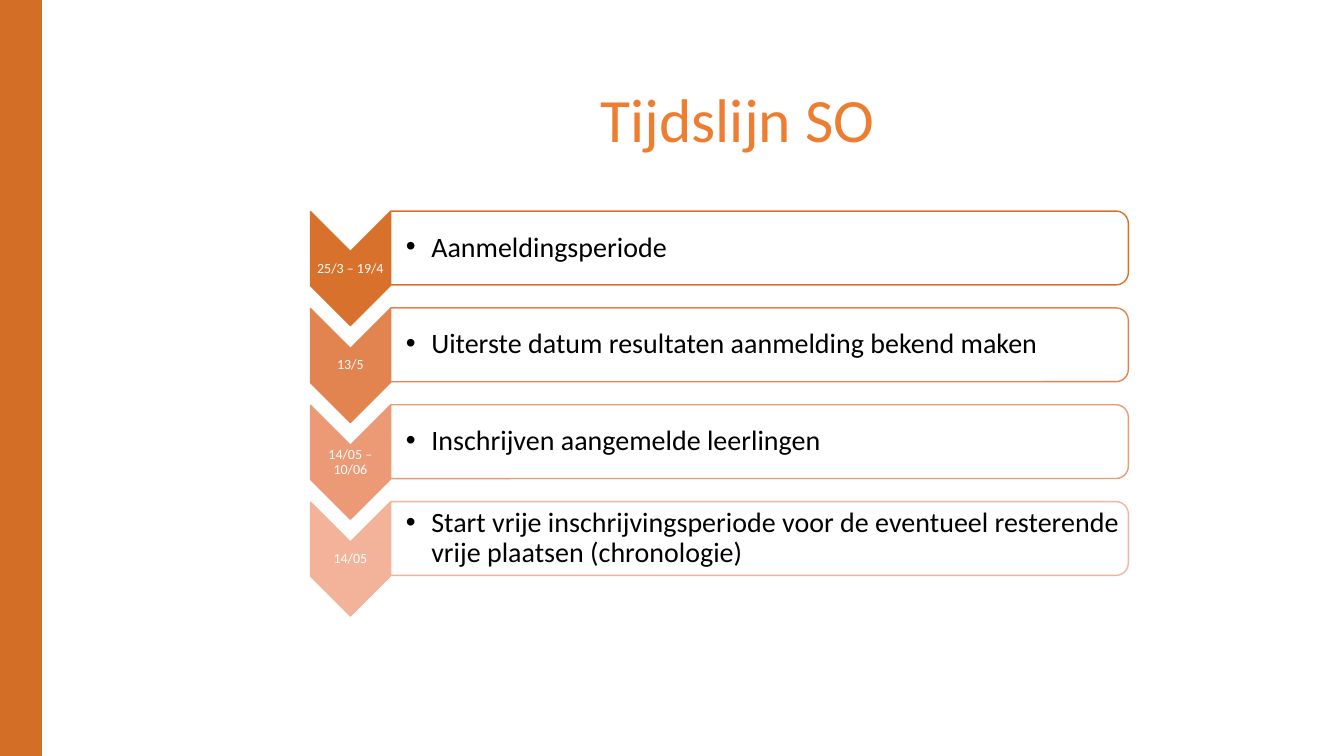
"""Build the slide with the secondary school enrolment timeline."""
from pptx import Presentation
from pptx.dml.color import RGBColor
from pptx.enum.shapes import MSO_SHAPE
from pptx.enum.text import MSO_ANCHOR, PP_ALIGN
from pptx.oxml.ns import qn
from pptx.util import Cm, Pt
from lxml.etree import SubElement

WHITE = RGBColor(0xFF, 0xFF, 0xFF)
BLACK = RGBColor(0, 0, 0)
ORANGE = RGBColor(0xED, 0x7D, 0x31)
BAND = RGBColor(0xD2, 0x6E, 0x25)

TITLE = "Tijdslijn SO"
STEPS = [
    ("25/3 – 19/4", "Aanmeldingsperiode", RGBColor(0xD7, 0x71, 0x2C)),
    ("13/5", "Uiterste datum resultaten aanmelding bekend maken",
     RGBColor(0xE2, 0x84, 0x50)),
    ("14/05 – 10/06", "Inschrijven aangemelde leerlingen",
     RGBColor(0xEB, 0x9A, 0x75)),
    ("14/05", "Start vrije inschrijvingsperiode voor de eventueel resterende "
     "vrije plaatsen (chronologie)", RGBColor(0xF3, 0xB3, 0x9B)),
]
FONT = "Calibri"
PITCH = 2.44
DATE_X, DATE_Y = 8.83, 6.77
BAR_X, BAR_Y = 19.14, 6.25
NOTE_X = 19.09


def frame(x, y, w, h):
    """Return left, top, width and height around a centre given in cm."""
    return Cm(x - w / 2), Cm(y - h / 2), Cm(w), Cm(h)


def add_form(slide, kind, box, fill, line, width=1, turn=0):
    """Add a filled and outlined preset shape."""
    form = slide.shapes.add_shape(kind, *box)
    form.shadow.inherit = False
    form.rotation = turn
    form.fill.solid()
    form.fill.fore_color.rgb = fill
    form.line.color.rgb = line
    form.line.width = Pt(width)


def add_text(slide, box, text, size, color, anchor=MSO_ANCHOR.MIDDLE,
             inset=0.03, left=0.03, bullet=False):
    """Add a text box with one paragraph, centred or bulleted."""
    body = slide.shapes.add_textbox(*box).text_frame
    body.word_wrap = True
    body.vertical_anchor = anchor
    body.margin_left = Cm(left)
    body.margin_right = body.margin_top = body.margin_bottom = Cm(inset)
    para = body.paragraphs[0]
    para.line_spacing = 0.9
    if bullet:
        props = para._p.get_or_add_pPr()
        props.set("marL", str(Cm(0.64)))
        props.set("indent", str(-Cm(0.64)))
        SubElement(props, qn("a:buFont")).set("typeface", "Arial")
        SubElement(props, qn("a:buChar")).set("char", "•")
    else:
        para.alignment = PP_ALIGN.CENTER
    run = para.add_run()
    run.text = text
    run.font.name = FONT
    run.font.size = Pt(size)
    run.font.color.rgb = color


def main():
    """Draw the band, the title and the four steps, then save."""
    deck = Presentation()
    deck.slide_width, deck.slide_height = Cm(33.87), Cm(19.05)
    slide = deck.slides.add_slide(deck.slide_layouts[6])

    add_form(slide, MSO_SHAPE.RECTANGLE, (0, 0, Cm(1.04), deck.slide_height),
             BAND, BAND, 0.5)
    add_text(slide, (Cm(4.8), Cm(2.11), Cm(27.46), Cm(3.1)), TITLE, 44,
             ORANGE, MSO_ANCHOR.TOP, 0.13, 0.25)

    for row, (date, note, color) in enumerate(STEPS):
        drop = row * PITCH
        date_y, bar_y = DATE_Y + drop, BAR_Y + drop
        add_form(slide, MSO_SHAPE.CHEVRON, frame(DATE_X, date_y, 2.87, 2.01),
                 color, color, turn=90)
        add_text(slide, frame(DATE_X, date_y, 2.01, 0.86), date, 10, WHITE)
        add_form(slide, MSO_SHAPE.ROUND_2_SAME_RECTANGLE,
                 frame(BAR_X, bar_y, 1.86, 18.59), WHITE, color, turn=90)
        add_text(slide, frame(NOTE_X, bar_y, 18.52, 1.68), note, 20, BLACK,
                 left=0.4, bullet=True)

    deck.save("out.pptx")


if __name__ == "__main__":
    main()
